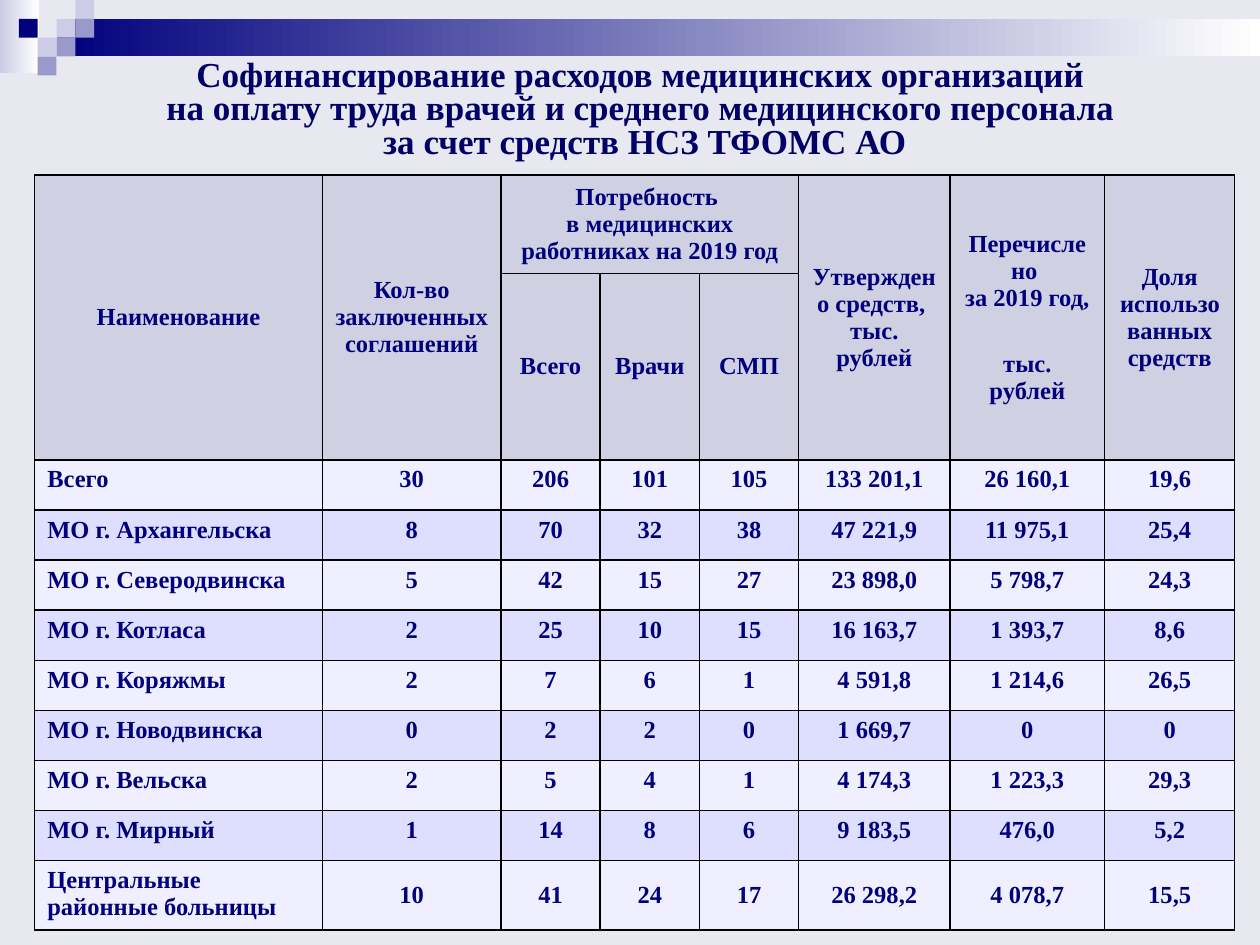
"""Build a slide with a table of co-financing of medical staff pay."""
from lxml.etree import SubElement
from pptx import Presentation
from pptx.dml.color import RGBColor
from pptx.enum.shapes import MSO_SHAPE as Shape
from pptx.enum.text import MSO_ANCHOR as Anchor, MSO_AUTO_SIZE as AutoSize, PP_ALIGN as Align
from pptx.oxml.ns import qn
from pptx.util import Cm, Pt

FONT = "Times New Roman"
NAVY, LILAC, VIOLET, WHITE = "00007D", "CCCCE6", "9999CC", "FFFFFF"
HEADER_FILL, BODY_FILLS = "D0D0E3", ("EFEFFF", "DEDEFF")

TITLE = ("Софинансирование расходов медицинских организаций \v"
         "на оплату труда врачей и среднего медицинского персонала \v"
         "за счет средств НСЗ ТФОМС АО")
HEADERS = [
    ["Наименование", "Кол-во заключенных соглашений",
     "Потребность \vв медицинских работниках на 2019 год", "", "",
     "Утверждено средств, \nтыс. рублей",
     "Перечислено \vза 2019 год, \vтыс. рублей",
     "Доля использованных средств"],
    ["", "", "Всего", "Врачи", "СМП", "", "", ""],
]
BODY = [
    ["Всего", "30", "206", "101", "105", "133 201,1", "26 160,1", "19,6"],
    ["МО г. Архангельска", "8", "70", "32", "38", "47 221,9", "11 975,1", "25,4"],
    ["МО г. Северодвинска", "5", "42", "15", "27", "23 898,0", "5 798,7", "24,3"],
    ["МО г. Котласа", "2", "25", "10", "15", "16 163,7", "1 393,7", "8,6"],
    ["МО г. Коряжмы", "2", "7", "6", "1", "4 591,8", "1 214,6", "26,5"],
    ["МО г. Новодвинска", "0", "2", "2", "0", "1 669,7", "0", "0"],
    ["МО г. Вельска", "2", "5", "4", "1", "4 174,3", "1 223,3", "29,3"],
    ["МО г. Мирный", "1", "14", "8", "6", "9 183,5", "476,0", "5,2"],
    ["Центральные районные больницы", "10", "41", "24", "17", "26 298,2", "4 078,7", "15,5"],
]
COLUMN_WIDTHS = [5.8, 3.6, 2, 2, 2, 3.05, 3.12, 2.62]
ROW_HEIGHTS = [1.98, 1.96] + [1.01] * 8 + [1.4]
MERGES = [(0, 2, 0, 4)] + [(0, column, 1, column) for column in (0, 1, 5, 6, 7)]

SQUARE = 0.38
BANDS = [(0, 0, 0.78, 1.47, LILAC), (1.14, SQUARE, 24.26, 0.75, NAVY)]
SQUARES = [(3, 1, LILAC), (4, 0, LILAC), (4, 1, VIOLET), (2, 2, LILAC),
           (1, 1, NAVY), (3, 2, VIOLET), (2, 3, VIOLET)]


def color(value):
    return RGBColor.from_string(value)


def add_block(group, left, top, width, height, start, end=None):
    block = group.shapes.add_shape(Shape.RECTANGLE, Cm(left), Cm(top), Cm(width), Cm(height))
    block.shadow.inherit = False
    block.line.fill.background()
    if end is None:
        block.fill.solid()
        block.fill.fore_color.rgb = color(start)
        return
    block.fill.gradient()
    block.fill.gradient_angle = 0
    for position, (stop, value) in enumerate(zip(block.fill.gradient_stops, (start, end))):
        stop.position = position
        stop.color.rgb = color(value)


def format_text(frame, size, value, align, spacing=1.0):
    for para in frame.paragraphs:
        para.alignment = align
        para.line_spacing = spacing
        for span in para.runs:
            span.font.name = FONT
            span.font.size = Pt(size)
            span.font.bold = True
            span.font.color.rgb = color(value)


def add_borders(cell):
    properties = cell._tc.get_or_add_tcPr()
    for index, side in enumerate(("a:lnL", "a:lnR", "a:lnT", "a:lnB")):
        line = properties.makeelement(qn(side), {"w": str(Pt(1))})
        SubElement(SubElement(line, qn("a:solidFill")), qn("a:srgbClr"), val="000000")
        properties.insert(index, line)


def add_decoration(page):
    group = page.shapes.add_group_shape()
    for left, top, width, height, start in BANDS:
        add_block(group, left, top, width, height, start, WHITE)
    for column, row, value in SQUARES:
        add_block(group, column * SQUARE, row * SQUARE, SQUARE, SQUARE, value)


def add_title(page):
    title = page.shapes.title
    title.left, title.top, title.width, title.height = Cm(1.7), Cm(1.14), Cm(22.6), Cm(2.18)
    frame = title.text_frame
    frame.text = TITLE
    frame.auto_size = AutoSize.NONE
    frame.vertical_anchor = Anchor.MIDDLE
    format_text(frame, 20, "000066", Align.CENTER, 0.8)


def add_staff_table(page):
    rows = HEADERS + BODY
    table = page.shapes.add_table(len(rows), len(COLUMN_WIDTHS), Cm(0.7), Cm(3.53),
                                  Cm(sum(COLUMN_WIDTHS)), Cm(sum(ROW_HEIGHTS))).table
    for column, width in zip(table.columns, COLUMN_WIDTHS):
        column.width = Cm(width)
    for row, height in zip(table.rows, ROW_HEIGHTS):
        row.height = Cm(height)
    for top, left, bottom, right in MERGES:
        table.cell(top, left).merge(table.cell(bottom, right))
    for r, texts in enumerate(rows):
        is_header = r < len(HEADERS)
        is_last = r == len(rows) - 1
        for c, text in enumerate(texts):
            cell = table.cell(r, c)
            cell.fill.solid()
            cell.fill.fore_color.rgb = color(HEADER_FILL if is_header else BODY_FILLS[r % 2])
            add_borders(cell)
            if cell.is_spanned:
                continue
            cell.text_frame.text = text
            centred = is_header or (is_last and c > 0)
            cell.vertical_anchor = Anchor.MIDDLE if centred else Anchor.TOP
            align = Align.CENTER if is_header or c > 0 else Align.LEFT
            format_text(cell.text_frame, 14, NAVY, align)


def main():
    deck = Presentation()
    deck.slide_width, deck.slide_height = Cm(25.4), Cm(19.05)
    page = deck.slides.add_slide(deck.slide_layouts[5])
    page.background.fill.solid()
    page.background.fill.fore_color.rgb = color("E8E8F1")
    add_decoration(page)
    add_title(page)
    add_staff_table(page)
    deck.save("out.pptx")


if __name__ == "__main__":
    main()
